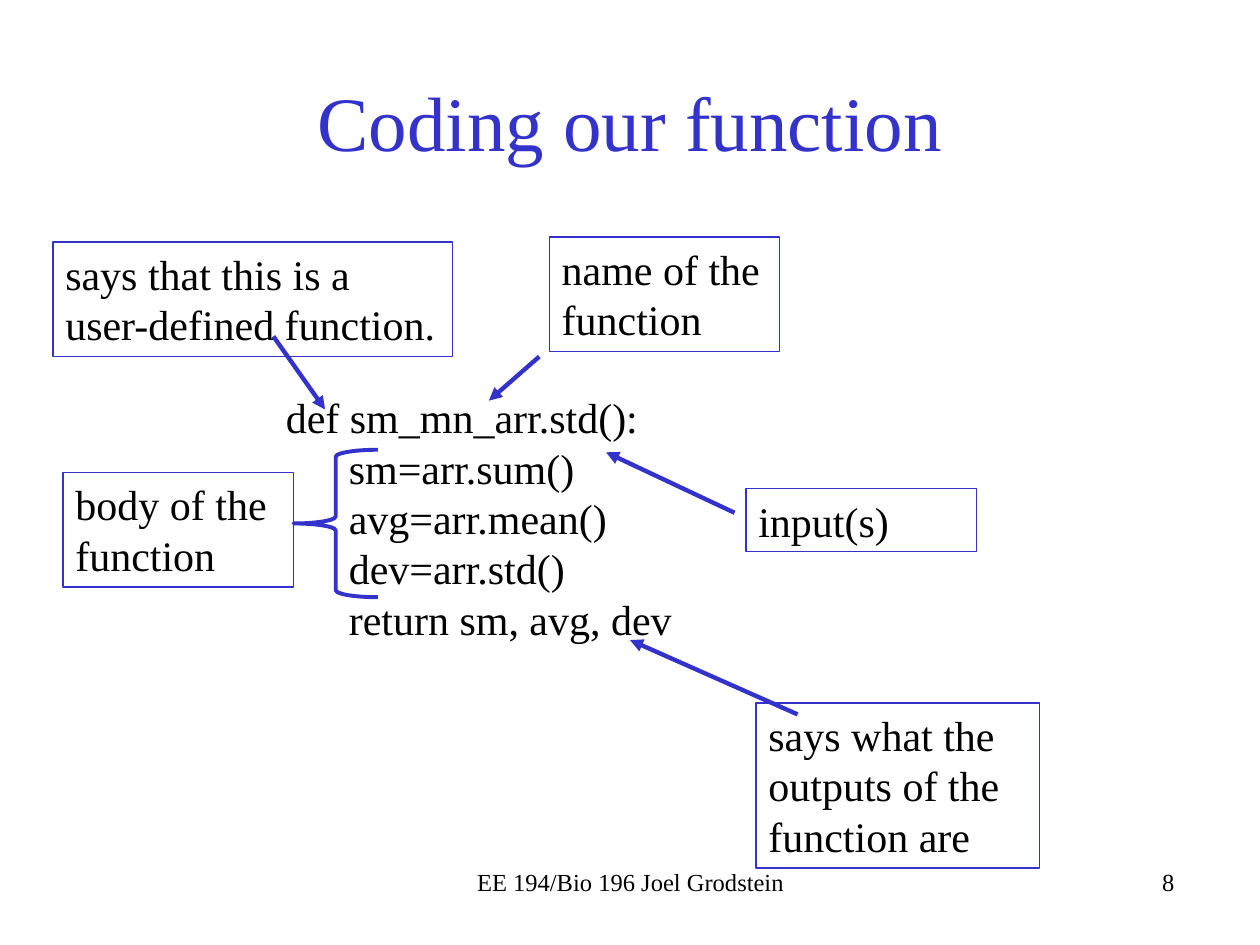
import pptx
import pptx.util
import pptx.dml.color
import pptx.enum.shapes
import pptx.enum.text
import pptx.oxml
import pptx.oxml.ns

Inches, Pt = pptx.util.Inches, pptx.util.Pt
Shape = pptx.enum.shapes.MSO_SHAPE
Align = pptx.enum.text.PP_ALIGN
Anchor = pptx.enum.text.MSO_ANCHOR
Fit = pptx.enum.text.MSO_AUTO_SIZE

THEME = {
    "font": "Times New Roman",
    "blue": pptx.dml.color.RGBColor.from_string("3333CC"),
    "black": pptx.dml.color.RGBColor.from_string("000000"),
    "white": pptx.dml.color.RGBColor.from_string("FFFFFF"),
    "title": 44, "body": 24, "foot": 14,
    "thin": 0.75, "brace": 2.25, "arrow": 2.5,
}

# Boxes are left, top, width, height in inches
TITLE = ("Coding our function", (0.75, 0.33, 8.5, 1.25))
CODE_BOX = (2.17, 3.06, 5.75, 2.33)
CODE = [  # indent level, line
    (0, "def sm_mn_arr.std():"),
    (1, "sm=arr.sum()"),
    (1, "avg=arr.mean()"),
    (1, "dev=arr.std()"),
    (1, "return sm, avg, dev"),
]
FOOT = [
    ("8", (6.25, 6.83, 3.17, 0.5), Align.RIGHT),
    ("EE 194/Bio 196 Joel Grodstein", (3.42, 6.83, 3.17, 0.5), Align.CENTER),
]
NOTES = [  # text, box, arrow from and to
    ("says that this is a user-defined function.", (0.42, 1.92, 3.17, 0.91),
     (2.17, 2.67, 2.58, 3.25)),
    ("name of the function", (4.36, 1.88, 1.83, 0.91),
     (4.28, 2.83, 3.88, 3.18)),
    ("input(s)", (5.92, 3.88, 1.83, 0.5), (5.83, 4.07, 4.81, 3.59)),
    ("says what the outputs of the function are", (6, 5.58, 2.25, 1.31),
     (6.33, 5.67, 5, 5.08)),
    ("body of the function", (0.5, 3.75, 1.83, 0.91), None),
]
BRACE = (2.33, 3.57, 0.67, 1.17)
INDENT = 0.5


def place(box):
    return [Inches(v) for v in box]


def assign(item, values):
    for name, value in values.items():
        setattr(item, name, value)


def write(shape, lines, size, color="black", align=Align.LEFT, **frame):
    """Fill a shape with (level, text) lines in one style."""
    text = shape.text_frame
    assign(text, {"word_wrap": True, "vertical_anchor": Anchor.TOP, **frame})
    for i, (level, line) in enumerate(lines):
        para = text.paragraphs[0] if i == 0 else text.add_paragraph()
        assign(para, {"alignment": align, "level": level})
        if level:
            props = para._p.get_or_add_pPr()
            props.set("marL", str(Inches(INDENT * level)))
            props.set("indent", "0")
        run = para.add_run()
        run.text = line
        assign(run.font, {"name": THEME["font"], "size": Pt(THEME[size])})
        run.font.color.rgb = THEME[color]


def stroke(item, width):
    item.line.color.rgb = THEME["blue"]
    item.line.width = Pt(THEME[width])


def outline(slide, kind, box, width):
    shape = slide.shapes.add_shape(kind, *place(box))
    shape.shadow.inherit = False
    shape.fill.background()
    stroke(shape, width)
    return shape


def arrow(slide, ends):
    line = slide.shapes.add_connector(
        pptx.enum.shapes.MSO_CONNECTOR.STRAIGHT, *place(ends))
    stroke(line, "arrow")
    make, qn = pptx.oxml.ns.qn, pptx.oxml.ns.nsdecls("a")
    props = line._element.spPr
    head = pptx.oxml.parse_xml(f'<a:tailEnd {qn} type="triangle"/>')
    props.find(make("a:ln")).append(head)
    props.append(pptx.oxml.parse_xml(f"<a:effectLst {qn}/>"))


def main():
    deck = pptx.Presentation()
    assign(deck, {"slide_width": Inches(10), "slide_height": Inches(7.5)})
    slide = deck.slides.add_slide(deck.slide_layouts[6])
    slide.background.fill.solid()
    slide.background.fill.fore_color.rgb = THEME["white"]

    def label(box):
        return slide.shapes.add_textbox(*place(box))

    title, box = TITLE
    write(label(box), [(0, title)], "title", "blue", Align.CENTER,
          vertical_anchor=Anchor.MIDDLE)
    write(label(CODE_BOX), CODE, "body")
    for text, box, align in FOOT:
        write(label(box), [(0, text)], "foot", align=align)
    for text, box, ends in NOTES:
        note = outline(slide, Shape.RECTANGLE, box, "thin")
        write(note, [(0, text)], "body", auto_size=Fit.SHAPE_TO_FIT_TEXT)
        if ends:
            arrow(slide, ends)
    outline(slide, Shape.LEFT_BRACE, BRACE, "brace")
    deck.save("out.pptx")


if __name__ == "__main__":
    main()
